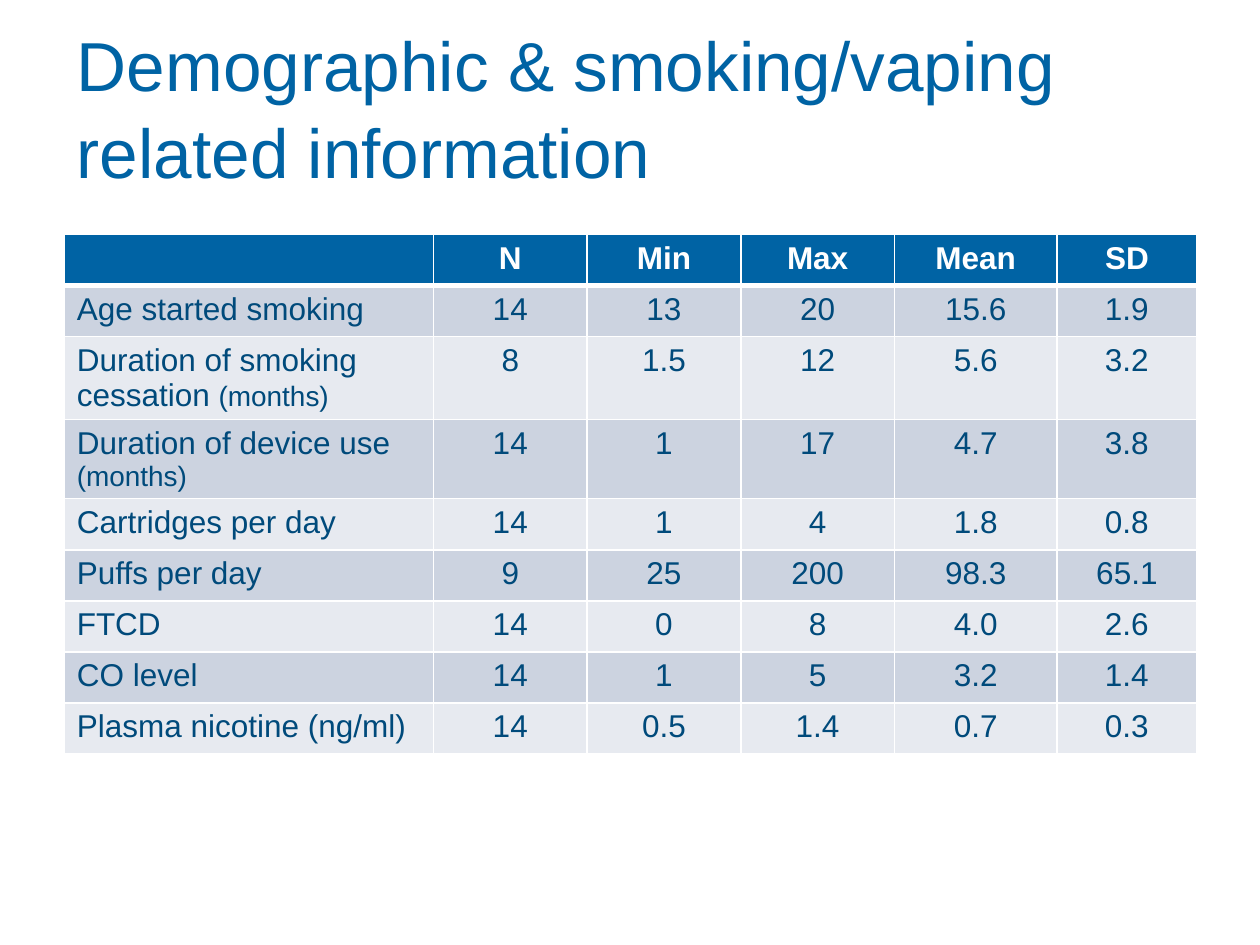
from lxml.etree import SubElement
from pptx import Presentation
from pptx.dml.color import RGBColor
from pptx.enum.text import MSO_ANCHOR as Anchor, MSO_AUTO_SIZE as AutoSize, PP_ALIGN as Align
from pptx.oxml.ns import qn
from pptx.util import Inches, Pt

HEADINGS = ["", "N", "Min", "Max", "Mean", "SD"]
MEASURES = [
    (["Age started smoking"], "14 13 20 15.6 1.9"),
    (["Duration of smoking cessation ", "(months)"], "8 1.5 12 5.6 3.2"),
    (["Duration of device use ", "(months)"], "14 1 17 4.7 3.8"),
    (["Cartridges per day"], "14 1 4 1.8 0.8"),
    (["Puffs per day"], "9 25 200 98.3 65.1"),
    (["FTCD"], "14 0 8 4.0 2.6"),
    (["CO level"], "14 1 5 3.2 1.4"),
    (["Plasma nicotine (ng/ml)"], "14 0.5 1.4 0.7 0.3"),
]
COLUMN_WIDTHS = [2.93, 1.22, 1.22, 1.22, 1.29, 1.11]
BLUE, NAVY, WHITE = "0063A4", "004A7B", "FFFFFF"
BANDS = ["CCD3E0", "E7EAF0"]
HEADER_FORMAT = {"name": "Arial", "size": Pt(18), "bold": True}
BODY_FORMAT = {"name": "Arial", "size": Pt(18), "bold": False}
UNIT_FORMAT = {**BODY_FORMAT, "size": Pt(16)}


def paint(target, colour):
    """Give a font or line colour format a hex colour."""
    target.rgb = RGBColor.from_string(colour)


def style(font, formats, colour):
    """Set font attributes and colour."""
    for name, value in formats.items():
        setattr(font, name, value)
    paint(font.color, colour)


def draw_borders(cell, bottom):
    """Draw white cell borders, with the given bottom width in points."""
    properties = cell._tc.get_or_add_tcPr()
    for index, (side, width) in enumerate([("L", 1), ("R", 1), ("T", 1), ("B", bottom)]):
        line = SubElement(properties, qn(f"a:ln{side}"), w=str(Pt(width)))
        fill = SubElement(line, qn("a:solidFill"))
        SubElement(fill, qn("a:srgbClr"), val=WHITE)
        properties.remove(line)
        properties.insert(index, line)


def fill_cell(cell, spans, formats, colour, fill, align, bottom=1):
    """Write spans into a cell; a second span holds the smaller unit."""
    cell.fill.solid()
    paint(cell.fill.fore_color, fill)
    draw_borders(cell, bottom)
    para = cell.text_frame.paragraphs[0]
    para.alignment = align
    style(para.font, formats, colour)
    for text, span_format in zip(spans, [formats, UNIT_FORMAT]):
        if text:
            span = para.add_run()
            span.text = text
            style(span.font, span_format, colour)


def place_title(page, box, text):
    """Move and format the title placeholder."""
    title = page.shapes.title
    title.left, title.top, title.width, title.height = map(Inches, box)
    frame = title.text_frame
    frame.text = text
    frame.word_wrap = True
    frame.auto_size = AutoSize.NONE
    frame.vertical_anchor = Anchor.MIDDLE
    para = frame.paragraphs[0]
    para.alignment = Align.LEFT
    para.line_spacing = 1.05
    style(para.runs[0].font, {"name": "Arial", "size": Pt(39.6)}, BLUE)


def place_table(page, box):
    """Build the banded table of measures in the given box."""
    frame = page.shapes.add_table(len(MEASURES) + 1, len(HEADINGS), *map(Inches, box))
    table = frame.table
    for column, width in zip(table.columns, COLUMN_WIDTHS):
        column.width = Inches(width)
    for index, heading in enumerate(HEADINGS):
        fill_cell(table.cell(0, index), [heading], HEADER_FORMAT, WHITE, BLUE, Align.CENTER, 3)
    for row, (label, values) in enumerate(MEASURES, 1):
        band = BANDS[(row - 1) % 2]
        fill_cell(table.cell(row, 0), label, BODY_FORMAT, NAVY, band, Align.LEFT)
        for column, value in enumerate(values.split(), 1):
            fill_cell(table.cell(row, column), [value], BODY_FORMAT, NAVY, band, Align.CENTER)


def main():
    """Build and save the deck."""
    deck = Presentation()
    deck.slide_width, deck.slide_height = Inches(10), Inches(7.5)
    page = deck.slides.add_slide(deck.slide_layouts[5])
    place_title(page, (0.51, 0.21, 9, 1.25), "Demographic & smoking/vaping related information")
    place_table(page, (0.51, 1.86, 9, 3.65))
    deck.save("out.pptx")


if __name__ == "__main__":
    main()
